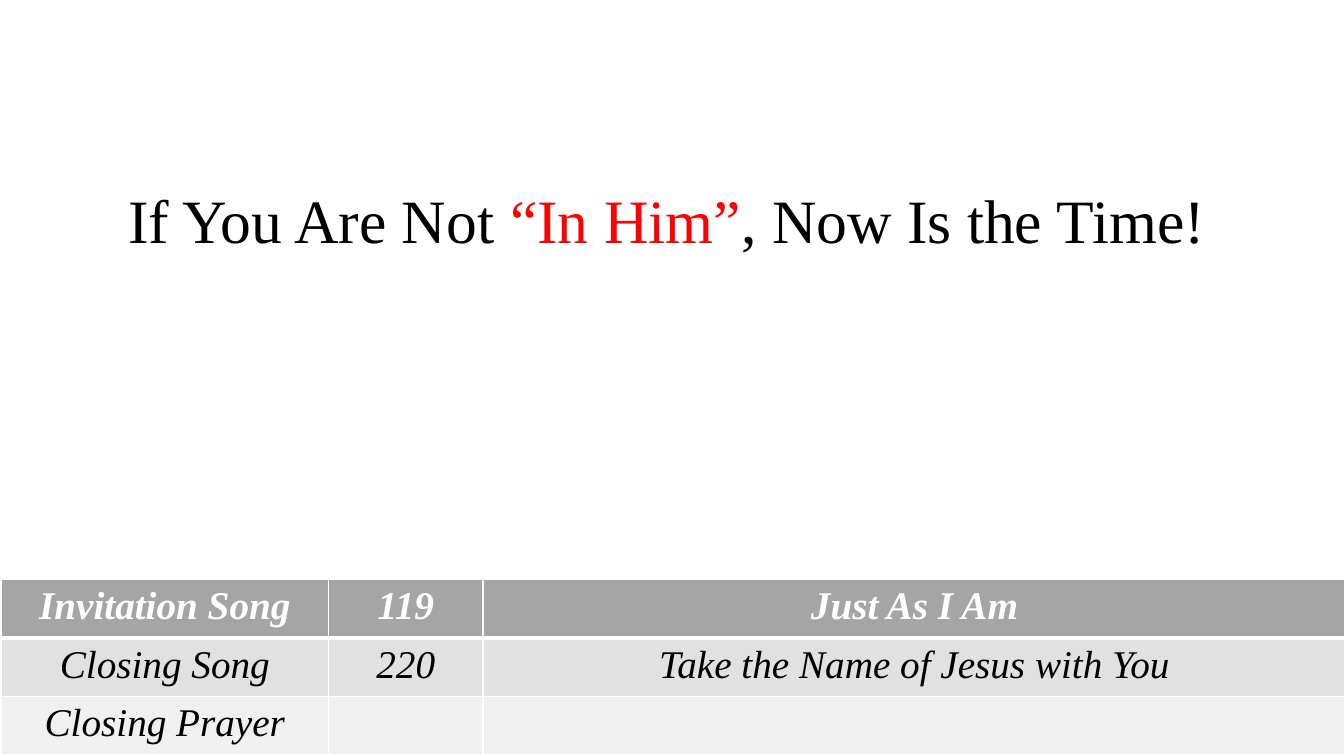
import lxml.etree
import pptx
import pptx.dml.color
import pptx.enum.text
import pptx.oxml.ns
import pptx.util
from dataclasses import dataclass

# Content
HEADLINE = [("If You Are Not ", "ink"), ("“In Him”", "accent"), (", Now Is the Time!", "ink")]
PROGRAM = [
    ("Invitation Song", "119", "Just As I Am"),
    ("Closing Song", "220", "Take the Name of Jesus with You"),
    ("Closing Prayer", "", ""),
]

# Layout in inches
SLIDE_W, SLIDE_H = 13.33, 7.5
HEADLINE_BOX = (1.17, 1.75, 10.96, 0.84)
PROGRAM_LEFT, PROGRAM_TOP, ROW_H = 0.01, 5.75, 0.58
COLUMN_WIDTHS = (3.25, 1.53, 8.56)


@dataclass(frozen=True)
class Theme:
    font: str = "Times New Roman"
    headline_size: int = 44
    program_size: int = 28
    ink: str = "000000"
    accent: str = "FF0000"
    paper: str = "FFFFFF"
    row_fills: tuple = ("A5A5A5", "E1E1E1", "F0F0F0")
    rule: int = 1
    header_rule: int = 3


THEME = Theme()


def rgb(color):
    return pptx.dml.color.RGBColor.from_string(color)


def add_run(paragraph, text, size, color, bold=False, italic=False):
    run = paragraph.add_run()
    run.text = text
    font = run.font
    font.name, font.size = THEME.font, pptx.util.Pt(size)
    font.bold, font.italic = bold, italic
    font.color.rgb = rgb(color)


def add_borders(cell, widths):
    """Draw the left, right, top and bottom borders of a cell."""
    properties = cell._tc.get_or_add_tcPr()
    qn = pptx.oxml.ns.qn
    for side, width in zip("LRTB", widths):
        line = lxml.etree.SubElement(properties, qn(f"a:ln{side}"), w=str(pptx.util.Pt(width)))
        fill = lxml.etree.SubElement(line, qn("a:solidFill"))
        lxml.etree.SubElement(fill, qn("a:srgbClr"), val=THEME.paper)


def add_headline(slide):
    headline = slide.shapes.title
    headline.left, headline.top, headline.width, headline.height = map(pptx.util.Inches, HEADLINE_BOX)
    frame = headline.text_frame
    frame.word_wrap = False
    frame.auto_size = pptx.enum.text.MSO_AUTO_SIZE.SHAPE_TO_FIT_TEXT
    frame.vertical_anchor = pptx.enum.text.MSO_ANCHOR.TOP
    sentence = frame.paragraphs[0]
    sentence.alignment = pptx.enum.text.PP_ALIGN.LEFT
    for text, role in HEADLINE:
        add_run(sentence, text, THEME.headline_size, getattr(THEME, role))


def add_program(slide):
    inches = pptx.util.Inches
    program = slide.shapes.add_table(
        len(PROGRAM), len(COLUMN_WIDTHS), inches(PROGRAM_LEFT), inches(PROGRAM_TOP),
        inches(sum(COLUMN_WIDTHS)), inches(ROW_H * len(PROGRAM))).table
    for column, width in zip(program.columns, COLUMN_WIDTHS):
        column.width = inches(width)
    for r, entries in enumerate(PROGRAM):
        program.rows[r].height = inches(ROW_H)
        is_header = r == 0
        top = THEME.header_rule if r == 1 else THEME.rule
        bottom = THEME.header_rule if is_header else THEME.rule
        for c, entry in enumerate(entries):
            cell = program.cell(r, c)
            add_borders(cell, (THEME.rule, THEME.rule, top, bottom))
            cell.fill.solid()
            cell.fill.fore_color.rgb = rgb(THEME.row_fills[r])
            paragraph = cell.text_frame.paragraphs[0]
            paragraph.alignment = pptx.enum.text.PP_ALIGN.CENTER
            if entry:
                add_run(paragraph, entry, THEME.program_size,
                        THEME.paper if is_header else THEME.ink, bold=is_header, italic=True)


def main():
    deck = pptx.Presentation()
    deck.slide_width = pptx.util.Inches(SLIDE_W)
    deck.slide_height = pptx.util.Inches(SLIDE_H)
    slide = deck.slides.add_slide(deck.slide_layouts.get_by_name("Title Only"))
    slide.background.fill.solid()
    slide.background.fill.fore_color.rgb = rgb(THEME.paper)
    add_headline(slide)
    add_program(slide)
    deck.save("out.pptx")


if __name__ == "__main__":
    main()
